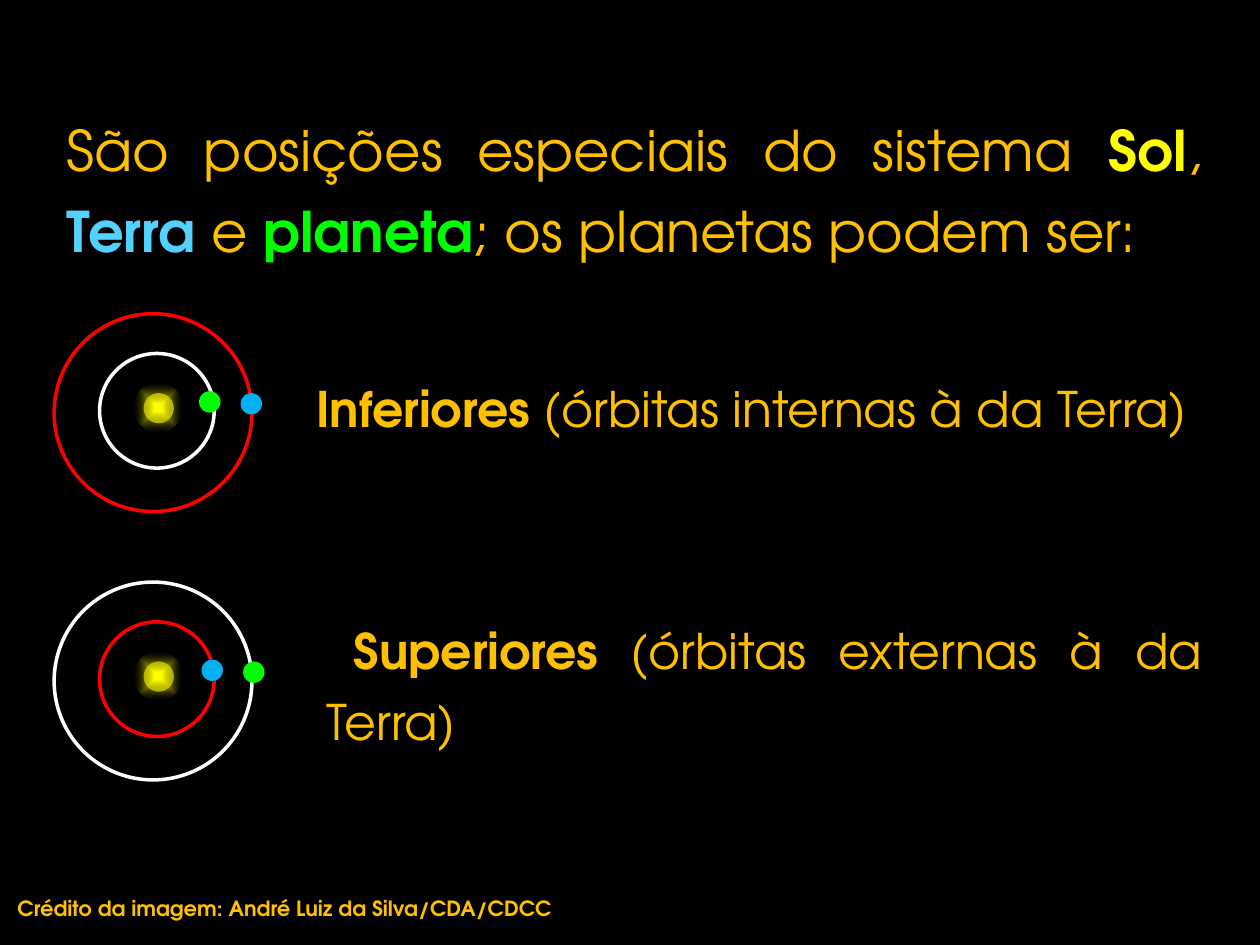
import pptx
import pptx.dml.color
import pptx.enum.shapes
import pptx.enum.text
import pptx.oxml
import pptx.oxml.ns
import pptx.util
from dataclasses import dataclass


@dataclass(frozen=True)
class Theme:
    font: str = "TeX Gyre Adventor"
    background: str = "000000"
    text: str = "FFC000"
    sun: str = "FFFF00"
    earth_word: str = "53D2FF"
    earth: str = "00B0F0"
    planet: str = "00FF00"
    earth_orbit: str = "FF0000"
    planet_orbit: str = "FFFFFF"
    intro_size: int = 32
    item_size: int = 28
    credit_size: int = 12
    orbit_width: int = 2


THEME = Theme()

# The slide is a grid of 100 columns by 75 rows of square cells
COLUMNS, ROWS = 100, 75
CELL = pptx.util.Inches(0.1)


def cells(count):
    return pptx.util.Emu(round(count * CELL))


def color(value):
    return pptx.dml.color.RGBColor.from_string(value)


# Text
def add_text_box(slide, left, top, width, height):
    box = slide.shapes.add_textbox(cells(left), cells(top), cells(width), cells(height))
    box.text_frame.word_wrap = True
    return box.text_frame


def add_runs(paragraph, size, parts):
    """Each part is its text, its colour and whether it is bold."""
    for text, run_color, bold in parts:
        run = paragraph.add_run()
        run.text = text
        run.font.name = THEME.font
        run.font.size = pptx.util.Pt(size)
        run.font.bold = bold
        run.font.color.rgb = color(run_color)


def justify(paragraph, space_before=0, margin=0, indent=0):
    paragraph.alignment = pptx.enum.text.PP_ALIGN.JUSTIFY
    paragraph.line_spacing = 1.2
    paragraph.space_before = pptx.util.Pt(space_before)
    properties = paragraph._p.get_or_add_pPr()
    properties.set("marL", str(cells(margin)))
    properties.set("indent", str(cells(indent)))


def add_definitions(slide):
    frame = add_text_box(slide, 4.3, 7.6, 92.1, 58.3)
    intro = frame.paragraphs[0]
    justify(intro)
    add_runs(intro, THEME.intro_size, [
        ("São posições especiais do sistema ", THEME.text, False),
        ("Sol", THEME.sun, True),
        (", ", THEME.text, False),
        ("Terra ", THEME.earth_word, True),
        ("e ", THEME.text, False),
        ("planeta", THEME.planet, True),
        ("; os planetas podem ser:", THEME.text, False),
    ])
    items = [
        ("Inferiores", " (órbitas internas à da Terra)", 59.4, -0.8),
        ("Superiores", " (órbitas externas à da Terra)", 97.7, 2.2),
    ]
    for name, meaning, space_before, indent in items:
        paragraph = frame.add_paragraph()
        justify(paragraph, space_before, 20.6, indent)
        add_runs(paragraph, THEME.item_size,
                 [(name, THEME.text, True), (meaning, THEME.text, False)])


# Circles
def add_circle(slide, left, top, diameter, fill=None, line=None):
    shape = slide.shapes.add_shape(
        pptx.enum.shapes.MSO_SHAPE.OVAL,
        cells(left), cells(top), cells(diameter), cells(diameter))
    shape.shadow.inherit = False
    if fill:
        shape.fill.solid()
        shape.fill.fore_color.rgb = color(fill)
    else:
        shape.fill.background()
    if line:
        shape.line.color.rgb = color(line)
        shape.line.width = pptx.util.Pt(THEME.orbit_width)
    else:
        shape.line.fill.background()
    return shape


def add_glow(slide, left, top, diameter):
    shape = add_circle(slide, left, top, diameter)
    gradient = pptx.oxml.parse_xml(
        f'<a:gradFill {pptx.oxml.ns.nsdecls("a")} rotWithShape="1"><a:gsLst>'
        f'<a:gs pos="16000"><a:srgbClr val="{THEME.sun}"/></a:gs>'
        f'<a:gs pos="100000"><a:srgbClr val="{THEME.background}">'
        '<a:alpha val="16000"/></a:srgbClr></a:gs>'
        f'<a:gs pos="100000"><a:srgbClr val="{THEME.background}"/></a:gs></a:gsLst>'
        '<a:path path="shape"><a:fillToRect l="50000" t="50000" r="50000" b="50000"/>'
        '</a:path></a:gradFill>')
    properties = shape._element.spPr
    properties.replace(properties.find(pptx.oxml.ns.qn("a:noFill")), gradient)


def add_orbits(slide, top, outer_line, inner_line, inner_body, outer_body, body_left):
    add_circle(slide, 4.3, top, 15.7, line=outer_line)
    add_circle(slide, 7.9, top + 3.15, 9.1, line=inner_line)
    add_circle(slide, 11.4, top + 6.3, 2.4, fill=THEME.sun)
    add_circle(slide, body_left, top + 6.15, 1.7, fill=inner_body)
    add_circle(slide, body_left + 3.3, top + 6.3, 1.7, fill=outer_body)
    add_glow(slide, 10.6, top + 5.5, 3.9)


def main():
    presentation = pptx.Presentation()
    presentation.slide_width = cells(COLUMNS)
    presentation.slide_height = cells(ROWS)
    slide = presentation.slides.add_slide(presentation.slide_layouts[6])
    slide.background.fill.solid()
    slide.background.fill.fore_color.rgb = color(THEME.background)

    add_definitions(slide)

    # Inferior planet above, superior planet below
    add_orbits(slide, 24.9, THEME.earth_orbit, THEME.planet_orbit,
               THEME.planet, THEME.earth, 15.8)
    add_orbits(slide, 46.2, THEME.planet_orbit, THEME.earth_orbit,
               THEME.earth, THEME.planet, 16)

    # Image credit
    credit = add_text_box(slide, 0.4, 70.6, 52.8, 3)
    add_runs(credit.paragraphs[0], THEME.credit_size,
             [("Crédito da imagem: André Luiz da Silva/CDA/CDCC", THEME.text, True)])

    presentation.save("out.pptx")


main()
